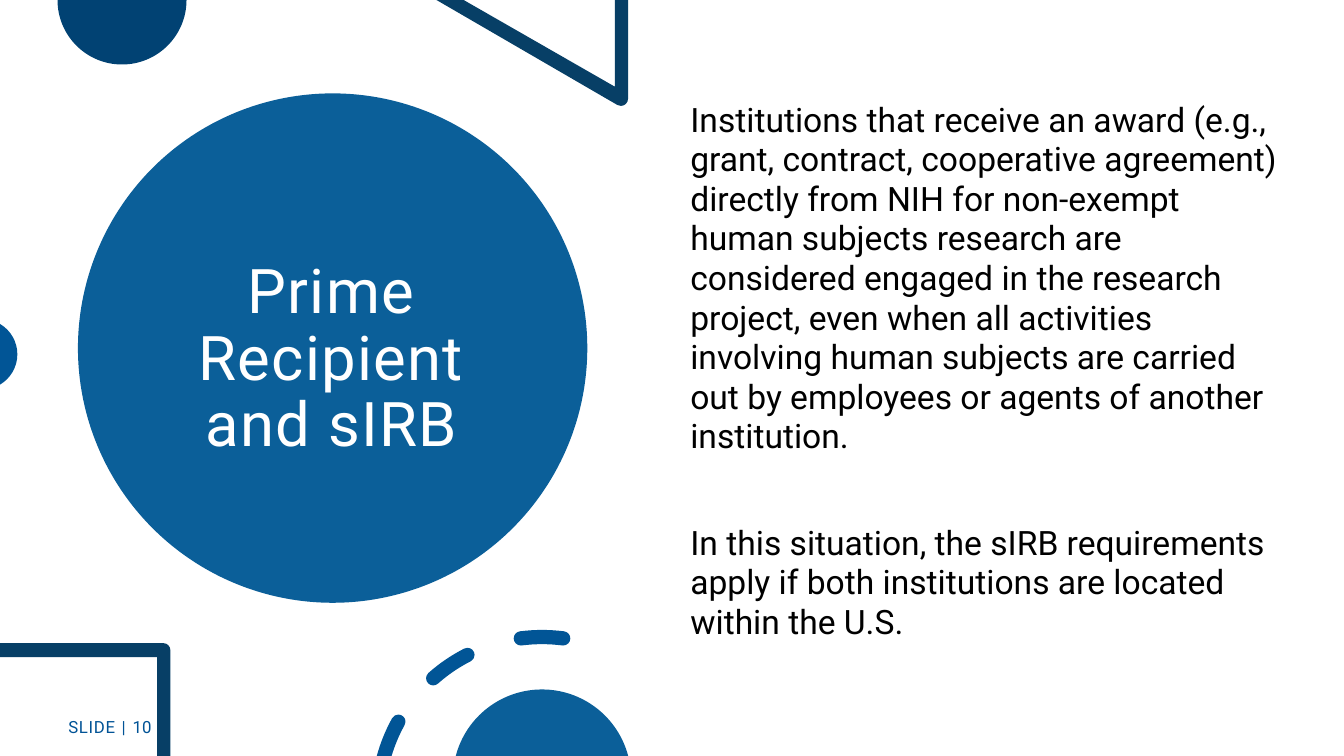
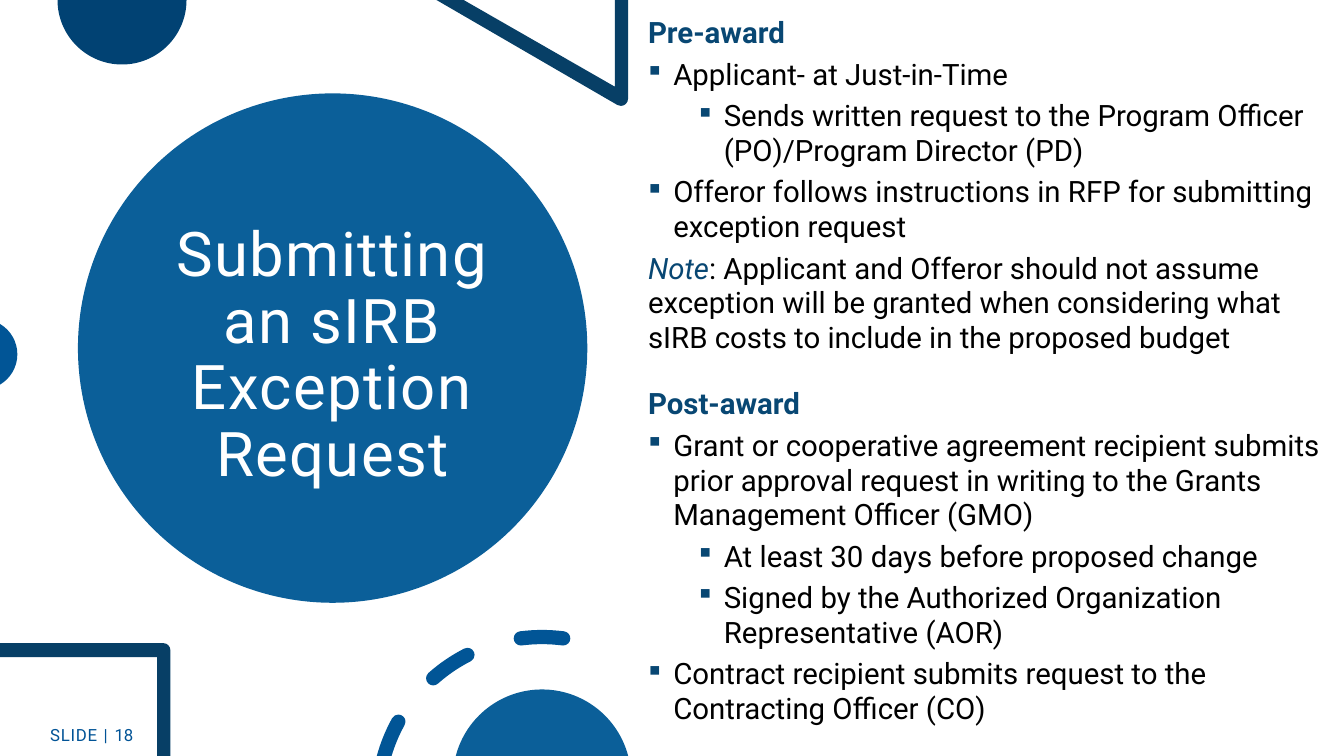
import math
from dataclasses import dataclass

import lxml.etree
import pptx
import pptx.dml.color
import pptx.enum.shapes
import pptx.enum.text
import pptx.oxml.ns
import pptx.util


@dataclass(frozen=True)
class Theme:
    font: str = "Roboto"
    disc: str = "0B5F99"
    navy: str = "014273"
    frame: str = "073F66"
    accent: str = "015596"
    footer: str = "015396"
    heading: str = "084773"
    text: str = "000000"
    light: str = "FFFFFF"
    title_size: float = 44
    statement_size: float = 24
    outline_size: float = 21
    footer_size: float = 12
    title_spacing: float = 0.9
    body_spacing: float = 0.98


@dataclass(frozen=True)
class Box:
    left: float
    top: float
    width: float
    height: float

    def inside(self, left, top, width, height):
        return Box(self.left + left, self.top + top, width, height)

    def emu(self):
        return [cells(value) for value in (self.left, self.top, self.width, self.height)]


THEME = Theme()
SLIDE_WIDTH = pptx.util.Emu(12192000)
SLIDE_HEIGHT = pptx.util.Emu(6858000)
COLUMNS = 100
CELL = SLIDE_WIDTH / COLUMNS
ROWS = SLIDE_HEIGHT / CELL
PANEL = Box(0, 0, 47, ROWS)
HANG = 1.88
INDENTS = {"heading": 0, "note": 0, "bullet": HANG, "detail": 3 * HANG}

STATEMENT = [
    "Institutions that receive an award (e.g., grant, contract, cooperative agreement) "
    "directly from NIH for non-exempt human subjects research are considered engaged in "
    "the research project, even when all activities involving human subjects are carried "
    "out by employees or agents of another institution.",
    "In this situation, the sIRB requirements apply if both institutions are located "
    "within the U.S.",
]
OUTLINE = [
    ("heading", "Pre-award"),
    ("bullet", "Applicant- at Just-in-Time"),
    ("detail", "Sends written request to the Program Officer (PO)/Program Director (PD)"),
    ("bullet", "Offeror follows instructions in RFP for submitting exception request"),
    ("note", "Note: Applicant and Offeror should not assume exception will be granted "
             "when considering what sIRB costs to include in the proposed budget"),
    ("heading", "Post-award"),
    ("bullet", "Grant or cooperative agreement recipient submits prior approval request "
               "in writing to the Grants Management Officer (GMO)"),
    ("detail", "At least 30 days before proposed change"),
    ("detail", "Signed by the Authorized Organization Representative (AOR)"),
    ("bullet", "Contract recipient submits request to the Contracting Officer (CO)"),
]


def cells(value):
    return pptx.util.Emu(round(value * CELL))


def paint(shape, color):
    shape.shadow.inherit = False
    shape.fill.solid()
    shape.fill.fore_color.rgb = pptx.dml.color.RGBColor.from_string(color)
    shape.line.fill.background()


def format_run(run, size, color, bold=False, italic=False, tracking=0):
    run.font.name = THEME.font
    run.font.size = pptx.util.Pt(size)
    run.font.bold = bold
    run.font.italic = italic
    run.font.color.rgb = pptx.dml.color.RGBColor.from_string(color)
    if tracking:
        run.font._element.set("spc", str(round(tracking * 100)))


def arc(center_x, center_y, radius, start, end):
    def place(degrees, pull=0):
        cosine, sine = math.cos(math.radians(degrees)), math.sin(math.radians(degrees))
        return (center_x + radius * (cosine - pull * sine),
                center_y - radius * (sine + pull * cosine))

    low, high = sorted((start, end))
    quadrants = [90 * turn for turn in range(-4, 9) if low + 1 < 90 * turn < high - 1]
    stops = sorted([start, *quadrants, end], reverse=start > end)
    curves = [place(start)]
    for first, last in zip(stops, stops[1:]):
        pull = 4 / 3 * math.tan(math.radians(last - first) / 4)
        curves.append(place(first, pull) + place(last, -pull) + place(last))
    return curves


def dash(center_x, center_y, radius, half_width, start, end, bottom=None):
    def cap(angle, turn):
        tip_x, tip_y = arc(center_x, center_y, radius, angle, angle)[0]
        return arc(tip_x, tip_y, half_width, turn, turn + 180)[1:]

    outer, inner = radius + half_width, radius - half_width
    if bottom is None:
        inner_arc = cap(end, end) + arc(center_x, center_y, inner, end, start)[1:]
        outer_end = end
    else:
        outer_end, inner_end = (180 - rise(center_y - bottom, edge) for edge in (outer, inner))
        inner_arc = arc(center_x, center_y, inner, inner_end, start)
    return arc(center_x, center_y, outer, start, outer_end) + inner_arc + cap(start, start + 180)


def rise(distance, radius):
    return math.degrees(math.asin(distance / radius))


def add_outline(slide, box, contours, color):
    def absolute(point):
        return cells(box.left + point[0]), cells(box.top + point[1])

    builder = slide.shapes.build_freeform(*absolute(contours[0][0]), scale=1.0)
    for index, contour in enumerate(contours):
        if index:
            builder.move_to(*absolute(contour[0]))
        builder.add_line_segments([absolute(step[-2:]) for step in contour[1:]], close=True)
    shape = builder.convert_to_shape()
    paint(shape, color)
    qualify = pptx.oxml.ns.qn
    lines = list(shape._element.iter(qualify("a:lnTo")))
    steps = [step for contour in contours for step in contour[1:]]
    for line, step in zip(lines, steps):
        if len(step) == 6:
            curve = lxml.etree.Element(qualify("a:cubicBezTo"))
            for index in (0, 2, 4):
                x, y = absolute(step[index:index + 2])
                point = lxml.etree.SubElement(curve, qualify("a:pt"))
                point.set("x", str(x - shape.left))
                point.set("y", str(y - shape.top))
            line.getparent().replace(line, curve)


def add_decoration(slide, box):
    triangle = [(46.73, 0), (45.75, 0), (45.75, 6.45), (34.5, 0), (32.48, 0)]
    triangle += arc(46.2, 7.35, 0.53, 240, 360)
    frame = [(0, 47.85), (0, 48.9), (11.7, 48.9), (11.7, box.height), (12.68, box.height)]
    frame += arc(12.15, 48.38, 0.53, 0, 90)
    dashes = [dash(40.33, 59.62, 12.22, 0.53, start, end, bottom)
              for start, end, bottom in ((151, None, box.height), (117, 131.5, None),
                                         (82.6, 97.4, None))]
    dome = rise(57.93 - box.height, 6.63)
    for contours, color in (
        ([arc(9.08, 0, 4.8, 180, 360)], THEME.navy),
        ([triangle], THEME.frame),
        ([arc(-1.33, 26.36, 2.62, -59.5, 59.5)], THEME.accent),
        ([frame], THEME.frame),
        (dashes, THEME.accent),
        ([arc(40.33, 57.93, 6.63, dome, 180 - dome)], THEME.disc),
    ):
        add_outline(slide, box, contours, color)


def add_title(slide, box, text):
    title = slide.shapes.title
    slide.shapes._spTree.append(title._element)
    title.left, title.top, title.width, title.height = box.emu()
    text_frame = title.text_frame
    text_frame.text = text
    text_frame.word_wrap = True
    text_frame.auto_size = pptx.enum.text.MSO_AUTO_SIZE.NONE
    text_frame.vertical_anchor = pptx.enum.text.MSO_ANCHOR.MIDDLE
    paragraph = text_frame.paragraphs[0]
    paragraph.alignment = pptx.enum.text.PP_ALIGN.CENTER
    paragraph.line_spacing = THEME.title_spacing
    format_run(paragraph.runs[0], THEME.title_size, THEME.light, tracking=1)


def add_panel(slide, box, title, title_position):
    disc = slide.shapes.add_shape(pptx.enum.shapes.MSO_SHAPE.OVAL,
                                  *box.inside(5.8, 6.95, 37.9, 37.9).emu())
    paint(disc, THEME.disc)
    add_title(slide, box.inside(*title_position, 26.55, 33.38), title)
    add_decoration(slide, box)


def add_text_frame(slide, box):
    text_frame = slide.shapes.add_textbox(*box.emu()).text_frame
    text_frame.word_wrap = True
    return text_frame


def add_paragraphs(text_frame, texts):
    text_frame.text = "\n".join(texts)
    for paragraph in text_frame.paragraphs:
        paragraph.line_spacing = THEME.body_spacing
    return text_frame.paragraphs


def add_footer(slide, box, number):
    text_frame = add_text_frame(slide, box)
    text_frame.vertical_anchor = pptx.enum.text.MSO_ANCHOR.MIDDLE
    paragraph = text_frame.paragraphs[0]
    paragraph.line_spacing = THEME.title_spacing
    for text, tracking in (("SLIDE", 0.5), (" | ", 1), (str(number), 0)):
        run = paragraph.add_run()
        run.text = text
        format_run(run, THEME.footer_size, THEME.footer, tracking=tracking)


def add_bullet(paragraph, indent):
    properties = paragraph._p.get_or_add_pPr()
    properties.set("marL", str(cells(indent)))
    properties.set("indent", str(-cells(HANG)))
    qualify = pptx.oxml.ns.qn
    color = lxml.etree.SubElement(properties, qualify("a:buClr"))
    lxml.etree.SubElement(color, qualify("a:srgbClr")).set("val", THEME.heading)
    lxml.etree.SubElement(properties, qualify("a:buFont")).set("typeface", "Wingdings")
    lxml.etree.SubElement(properties, qualify("a:buChar")).set("char", "§")


def add_statement(slide, box):
    paragraphs = add_paragraphs(add_text_frame(slide, box), STATEMENT)
    for index, paragraph in enumerate(paragraphs):
        if index:
            paragraph.space_before = pptx.util.Pt(48)
        format_run(paragraph.runs[0], THEME.statement_size, THEME.text)


def add_requirements(slide, box):
    paragraphs = add_paragraphs(add_text_frame(slide, box), [text for _, text in OUTLINE])
    for index, (paragraph, (kind, text)) in enumerate(zip(paragraphs, OUTLINE)):
        if index:
            paragraph.space_before = pptx.util.Pt(23 if kind == "heading" else 5)
        if INDENTS[kind]:
            add_bullet(paragraph, INDENTS[kind])
        is_heading = kind == "heading"
        format_run(paragraph.runs[0], THEME.outline_size,
                   THEME.heading if is_heading else THEME.text, bold=is_heading)
        if kind == "note":
            label, separator, remark = text.partition(":")
            paragraph.runs[0].text = label
            format_run(paragraph.runs[0], THEME.outline_size, THEME.heading, italic=True)
            run = paragraph.add_run()
            run.text = separator + remark
            format_run(run, THEME.outline_size, THEME.text)


def add_slide(presentation, title, title_position, number, footer_box, add_body, body_box):
    slide = presentation.slides.add_slide(presentation.slide_layouts[5])
    add_panel(slide, PANEL, title, title_position)
    add_body(slide, body_box)
    add_footer(slide, footer_box, number)


def main():
    presentation = pptx.Presentation()
    presentation.slide_width = SLIDE_WIDTH
    presentation.slide_height = SLIDE_HEIGHT
    add_slide(presentation, "Prime Recipient and sIRB", (11.4, 10.13),
              10, Box(4.35, 52.65, 10.95, 3),
              add_statement, Box(50.63, 7.13, 45.68, 43.05))
    add_slide(presentation, "Submitting an sIRB Exception Request", (11.48, 9.83),
              18, Box(3, 53.25, 8.33, 3),
              add_requirements, Box(47.48, 0.83, 52.5, 54.53))
    presentation.save("out.pptx")


if __name__ == "__main__":
    main()
